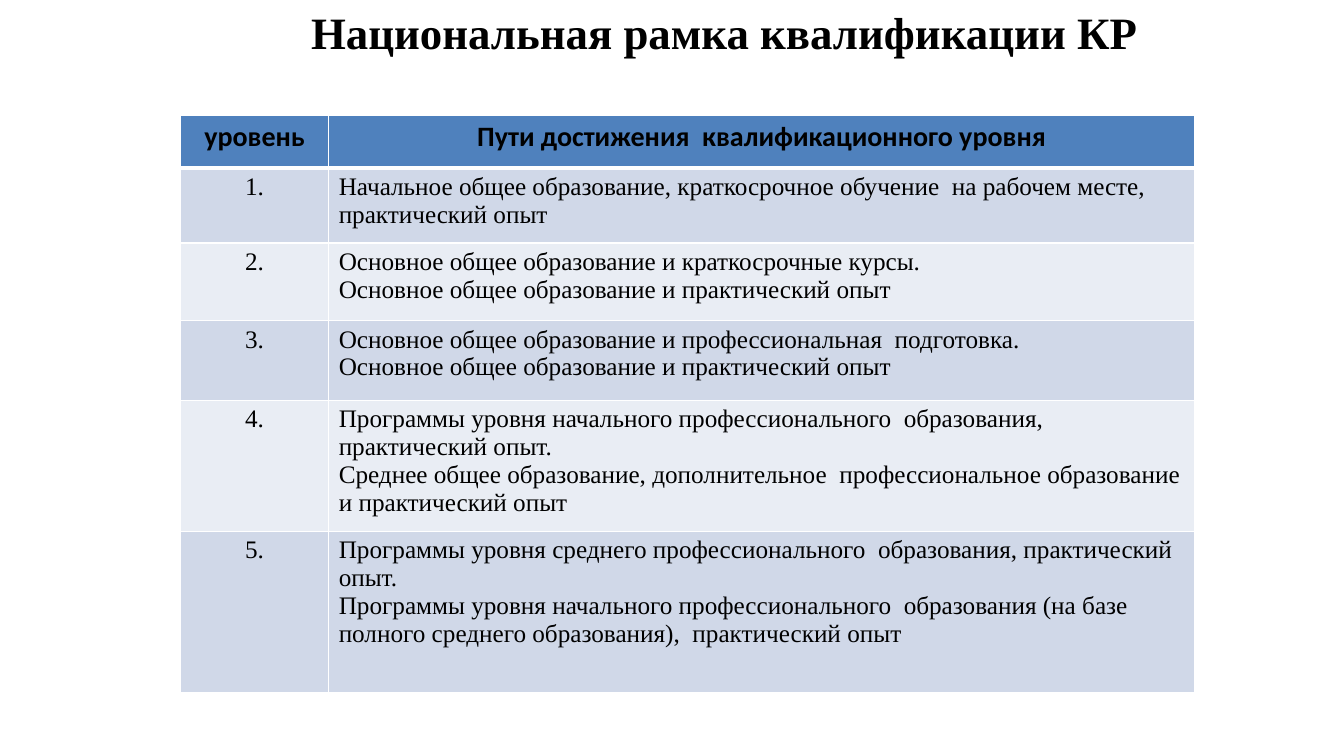
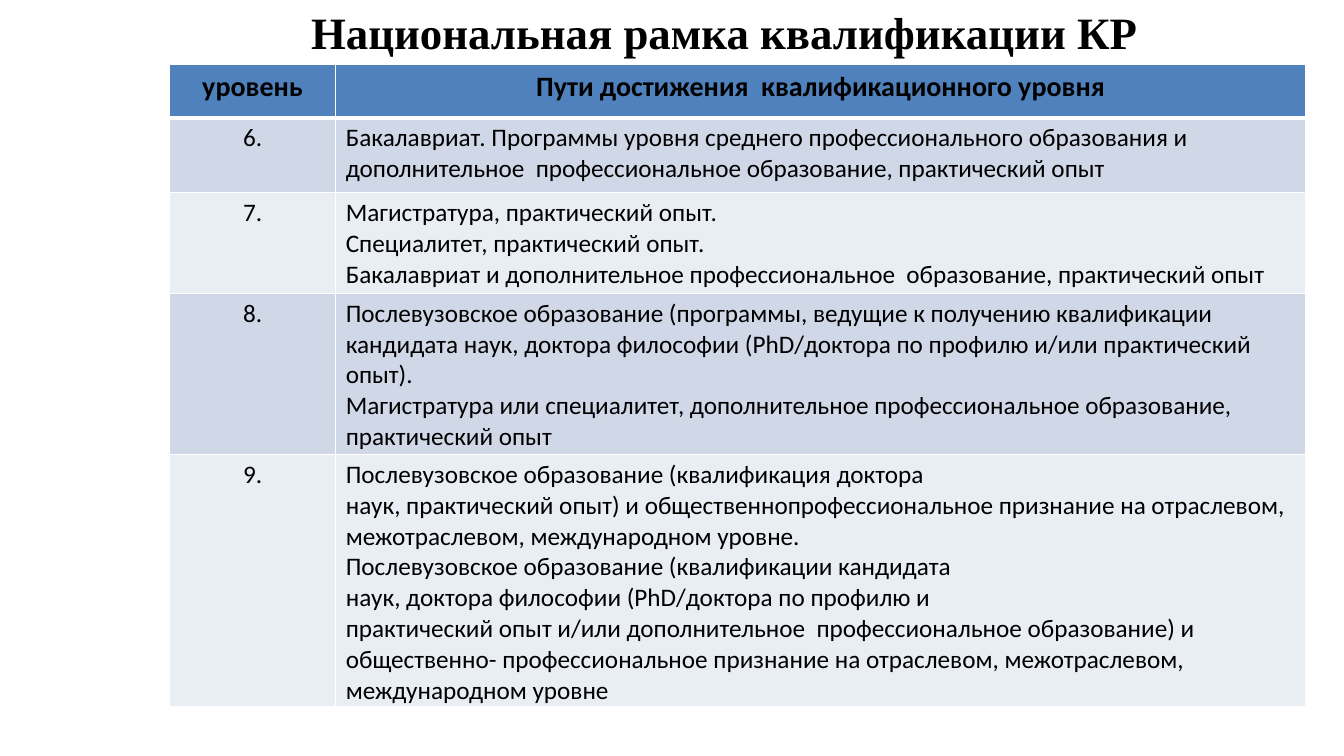
"""Build two slides on the national qualifications framework."""
from lxml import etree
from pptx import Presentation
from pptx import util as u
from pptx.dml import color
from pptx.enum import text
from pptx.oxml import ns

COLORS = {"ink": "000000", "header": "4F81BD", "odd": "D0D8E8",
          "even": "E9EDF4", "border": "FFFFFF"}
SERIF, SANS = "Times New Roman", "Calibri"
FORMATS = {
    "title": {"name": SERIF, "size": u.Pt(32), "bold": True},
    "header": {"name": SANS, "size": u.Pt(20), "bold": True},
    "serif": {"name": SERIF, "size": u.Pt(18), "bold": False},
    "sans": {"name": SANS, "size": u.Pt(18), "bold": False},
}
TITLE = "Национальная рамка квалификации КР"
HEADINGS = ("уровень", ["Пути достижения  квалификационного уровня"])

LOWER_LEVELS = [
    ("1.", ["Начальное общее образование, краткосрочное обучение  на рабочем месте, практический опыт"]),
    ("2.", ["Основное общее образование и краткосрочные курсы.",
            "Основное общее образование и практический опыт"]),
    ("3.", ["Основное общее образование и профессиональная  подготовка.",
            "Основное общее образование и практический опыт"]),
    ("4.", ["Программы уровня начального профессионального  образования, практический опыт.",
            "Среднее общее образование, дополнительное  профессиональное образование и практический опыт"]),
    ("5.", ["Программы уровня среднего профессионального  образования, практический опыт.",
            "Программы уровня начального профессионального  образования (на базе полного среднего "
            "образования),  практический опыт"]),
]
UPPER_LEVELS = [
    ("6.", ["Бакалавриат. Программы уровня среднего профессионального образования и дополнительное  "
            "профессиональное образование, практический опыт"]),
    ("7.", ["Магистратура, практический опыт.",
            "Специалитет, практический опыт.",
            "Бакалавриат и дополнительное профессиональное  образование, практический опыт"]),
    ("8.", ["Послевузовское образование (программы, ведущие к получению квалификации кандидата наук, "
            "доктора философии (PhD/доктора по профилю и/или практический опыт).",
            "Магистратура или специалитет, дополнительное профессиональное образование, практический опыт"]),
    ("9.", ["Послевузовское образование (квалификация доктора",
            "наук, практический опыт) и общественнопрофессиональное признание на отраслевом,  "
            "межотраслевом, международном уровне.",
            "Послевузовское образование (квалификации кандидата",
            "наук, доктора философии (PhD/доктора по профилю и",
            "практический опыт и/или дополнительное  профессиональное образование) и общественно- "
            "профессиональное признание на отраслевом, межотраслевом, международном уровне"]),
]


class Deck:
    def __init__(self):
        self.prs = Presentation()
        self.prs.slide_width, self.prs.slide_height = u.Inches(13.33), u.Inches(7.5)
        self.slide = None

    def add_slide(self):
        self.slide = self.prs.slides.add_slide(self.prs.slide_layouts[6])
        self.title()

    def add_lines(self, frame, lines, style, centered):
        for index, line in enumerate(lines):
            paragraph = frame.paragraphs[0] if index == 0 else frame.add_paragraph()
            paragraph.alignment = text.PP_ALIGN.CENTER if centered else text.PP_ALIGN.LEFT
            run = paragraph.add_run()
            run.text = line
            for key, value in FORMATS[style].items():
                setattr(run.font, key, value)
            run.font.color.rgb = color.RGBColor.from_string(COLORS["ink"])

    def title(self):
        box = self.slide.shapes.add_textbox(u.Inches(1.42), 0, u.Inches(11.53), u.Inches(0.64))
        frame = box.text_frame
        frame.word_wrap = True
        frame.auto_size = text.MSO_AUTO_SIZE.SHAPE_TO_FIT_TEXT
        self.add_lines(frame, [TITLE], "title", True)

    def borders(self, cell, row):
        properties = cell._tc.get_or_add_tcPr()
        widths = {"lnL": 1, "lnR": 1, "lnT": 3 if row == 1 else 1, "lnB": 3 if row == 0 else 1}
        for side, width in widths.items():
            line = etree.SubElement(properties, ns.qn("a:" + side), w=str(u.Pt(width)))
            fill = etree.SubElement(line, ns.qn("a:solidFill"))
            etree.SubElement(fill, ns.qn("a:srgbClr"), val=COLORS["border"])

    def levels_table(self, left, top, widths, heights, levels, body_style):
        rows = [HEADINGS, *levels]
        table = self.slide.shapes.add_table(
            len(rows), len(widths), u.Inches(left), u.Inches(top),
            u.Inches(sum(widths)), u.Inches(sum(heights))).table
        for column, width in zip(table.columns, widths):
            column.width = u.Inches(width)
        for row, (level, routes) in enumerate(rows):
            table.rows[row].height = u.Inches(heights[row])
            band = "header" if row == 0 else ("even", "odd")[row % 2]
            style = "header" if row == 0 else body_style
            for column, lines in enumerate(([level], routes)):
                cell = table.cell(row, column)
                self.borders(cell, row)
                cell.fill.solid()
                cell.fill.fore_color.rgb = color.RGBColor.from_string(COLORS[band])
                self.add_lines(cell.text_frame, lines, style, row == 0 or column == 0)


def main():
    deck = Deck()
    deck.add_slide()
    deck.levels_table(1.79, 1.14, (1.47, 8.59), (0.53, 0.74, 0.77, 0.79, 1.3, 1.6),
                      LOWER_LEVELS, "serif")
    deck.add_slide()
    deck.levels_table(1.68, 0.64, (1.65, 9.62), (0.53, 0.74, 1, 1.6, 2.5),
                      UPPER_LEVELS, "sans")
    deck.prs.save("out.pptx")


if __name__ == "__main__":
    main()
